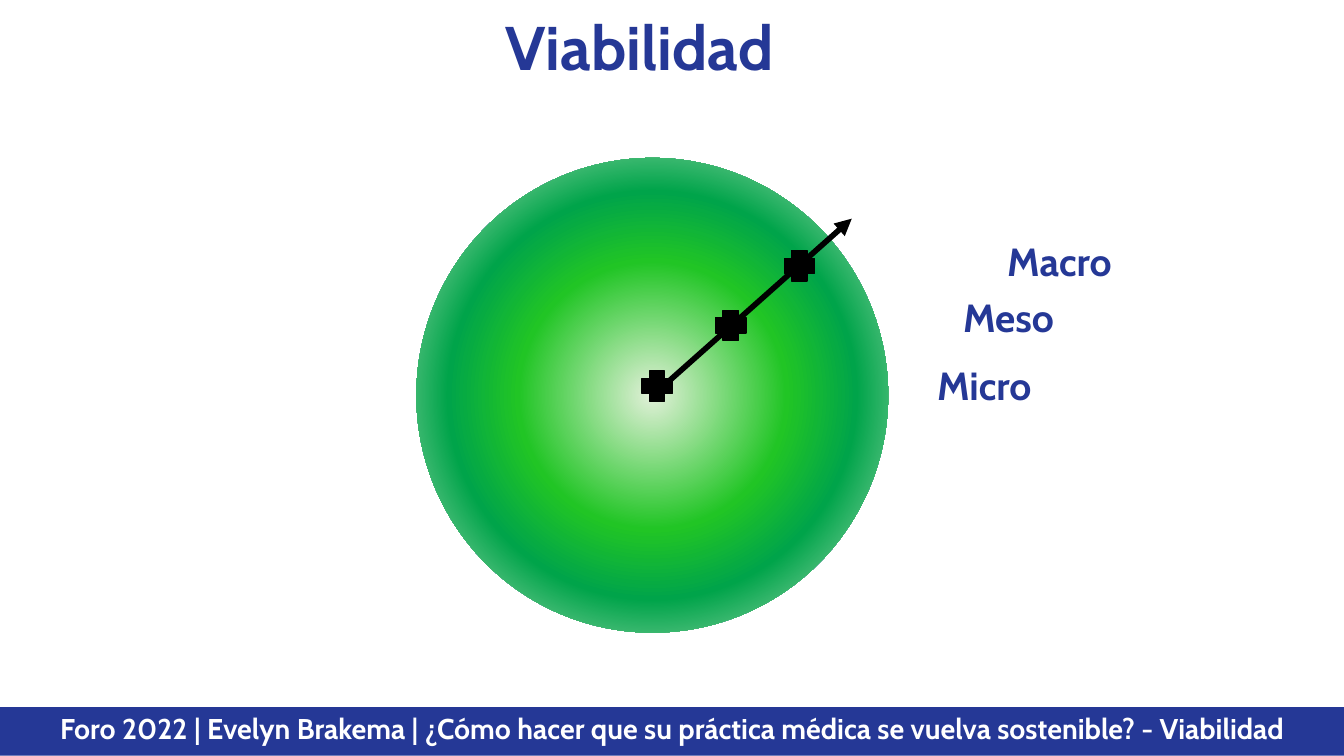
from lxml import etree
from pptx import Presentation
from pptx.dml.color import RGBColor
from pptx.enum.shapes import MSO_CONNECTOR, MSO_SHAPE
from pptx.enum.text import MSO_ANCHOR, PP_ALIGN
from pptx.oxml import parse_xml
from pptx.oxml.ns import nsdecls, qn
from pptx.util import Pt

OVAL, PLUS, RECT = MSO_SHAPE.OVAL, MSO_SHAPE.CROSS, MSO_SHAPE.RECTANGLE
LINE = MSO_CONNECTOR.STRAIGHT
CENTER, MIDDLE = PP_ALIGN.CENTER, MSO_ANCHOR.MIDDLE
BLUE = RGBColor(0x25, 0x38, 0x96)
BLACK = RGBColor(0, 0, 0)
WHITE = RGBColor(255, 255, 255)
MINT = RGBColor(0xE2, 0xF0, 0xD9)
LIME = RGBColor(0x21, 0xC5, 0x25)
GREEN = RGBColor(0x00, 0xA4, 0x4A)
STOPS = [(0, MINT), (40, LIME), (61, GREEN), (100, MINT)]


def style(para, size, color, space):
    para.line_spacing = space
    for run in para.runs:
        run.font.name = "Cabin"
        run.font.size = Pt(size)
        run.font.bold = True
        run.font.color.rgb = color


def shape(kind, left, top, width, height, color):
    item = slide.shapes.add_shape(kind, Pt(left), Pt(top), Pt(width), Pt(height))
    item.shadow.inherit = False
    item.fill.solid()
    item.fill.fore_color.rgb = color
    item.line.fill.background()
    return item


deck = Presentation()
deck.slide_width, deck.slide_height = Pt(960), Pt(540)
slide = deck.slides.add_slide(deck.slide_layouts[6])

# Title
title = slide.shapes.add_textbox(Pt(20.9), Pt(8.6), Pt(872), Pt(104.4))
title.text_frame.word_wrap = True
head = title.text_frame.paragraphs[0]
head.text = "Viabilidad"
head.alignment = CENTER
style(head, 44, BLUE, 0.9)

# Level names: text, indent, space before
LEVELS = [("Macro", 50, 0), ("Meso", 18.5, 10), ("Micro", 0, 18)]
names = slide.shapes.add_textbox(Pt(662.4), Pt(169.7), Pt(280), Pt(140))
frame = names.text_frame
frame.word_wrap = True
frame.text = "\n".join(level[0] for level in LEVELS)
for para, (_, indent, gap) in zip(frame.paragraphs, LEVELS):
    style(para, 28, BLUE, 0.9)
    para.space_before = Pt(gap)
    para._p.get_or_add_pPr().set("marL", str(Pt(indent)))

# Circle with a radial gradient
disc = shape(OVAL, 297.4, 112.8, 337, 339.1, GREEN)
marks = "".join(
    f'<a:gs pos="{pos * 1000}"><a:srgbClr val="{color}"/></a:gs>'
    for pos, color in STOPS)
grad = parse_xml(
    f'<a:gradFill {nsdecls("a")} rotWithShape="1"><a:gsLst>{marks}</a:gsLst>'
    '<a:path path="circle"><a:fillToRect l="50000" t="50000" r="50000" b="50000"/>'
    '</a:path></a:gradFill>')
props = disc._element.spPr
props.replace(props.find(qn("a:solidFill")), grad)

# Arrow from the centre outwards
arrow = slide.shapes.add_connector(LINE, Pt(466.6), Pt(282.2), Pt(608.4), Pt(156.2))
arrow.line.color.rgb = BLACK
arrow.line.width = Pt(4)
etree.SubElement(arrow.line._get_or_add_ln(), qn("a:tailEnd"), type="triangle")
etree.SubElement(arrow._element.spPr, qn("a:effectLst"))

# Level markers
for left, top in [(458.6, 265), (511.2, 221.6), (560.2, 179.1)]:
    plus = shape(PLUS, left, top, 21.6, 21.6, BLACK)
    plus.line.color.rgb = BLACK
    plus.line.width = Pt(1)

# Footer
foot = shape(RECT, 0, 505.1, 960, 34.6, BLUE)
foot.text_frame.word_wrap = True
foot.text_frame.vertical_anchor = MIDDLE
note = foot.text_frame.paragraphs[0]
note.text = ("Foro 2022 | Evelyn Brakema | ¿Cómo hacer que su práctica médica "
             "se vuelva sostenible? - Viabilidad")
note.alignment = CENTER
style(note, 20.4, WHITE, 0.8)

deck.save("out.pptx")
